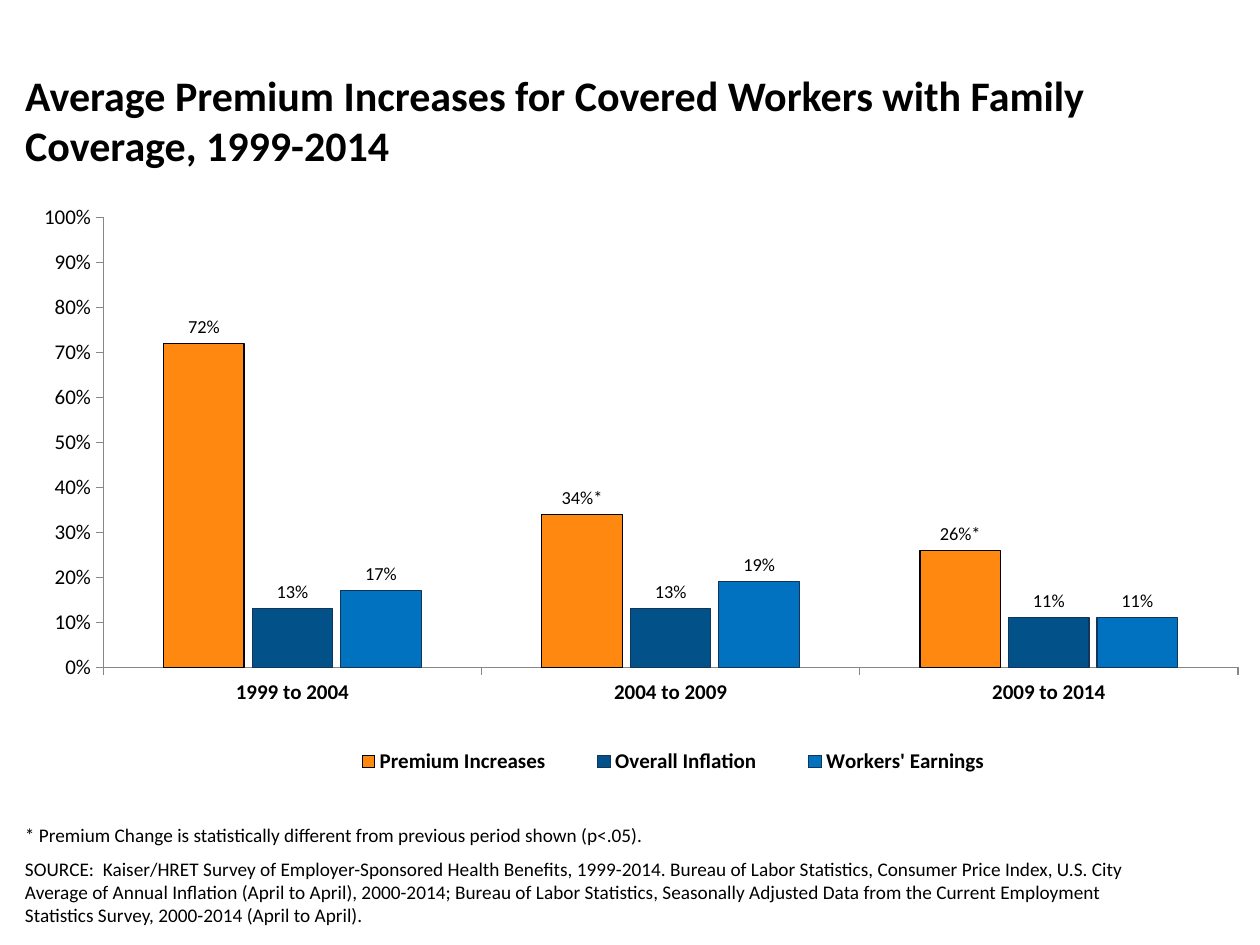
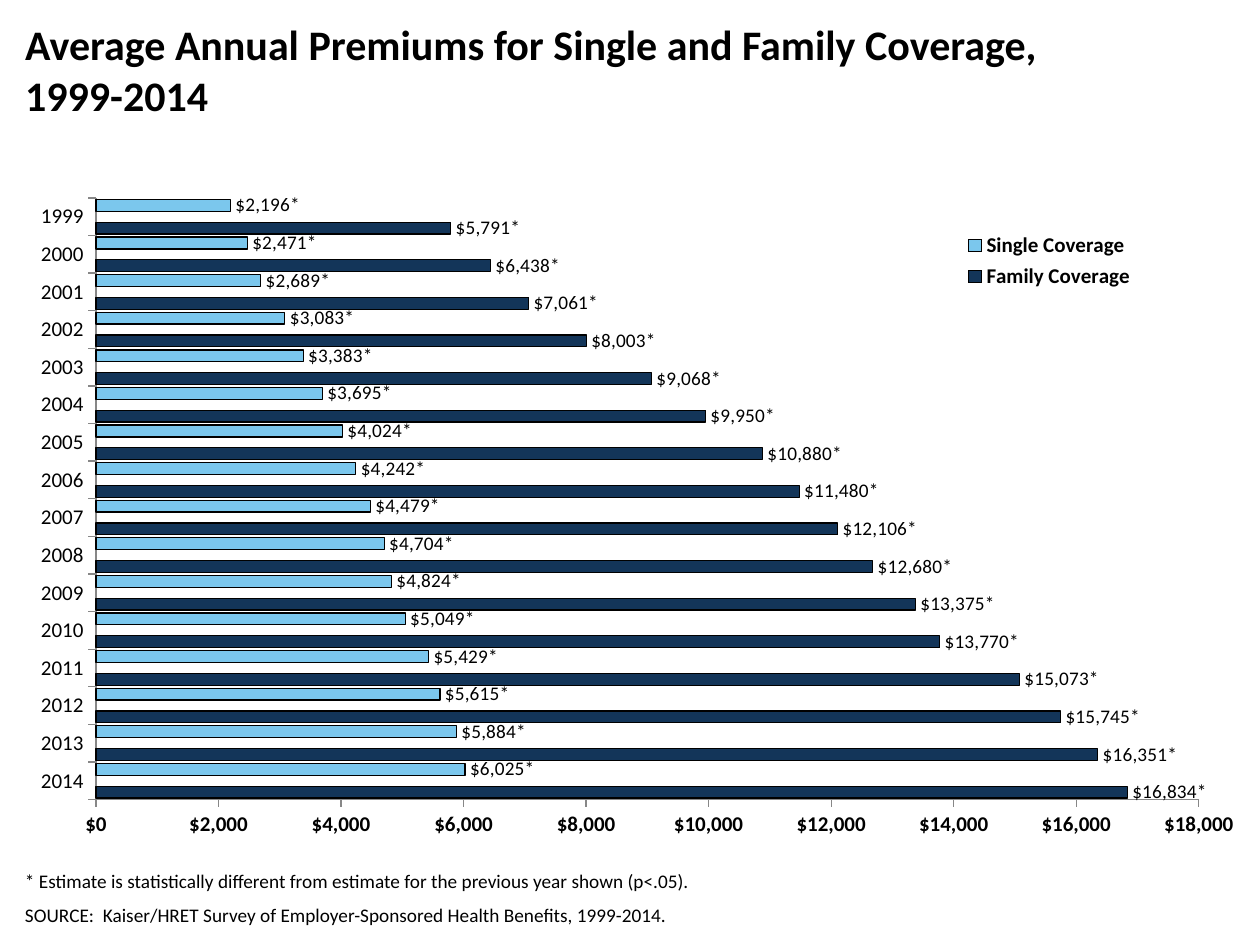
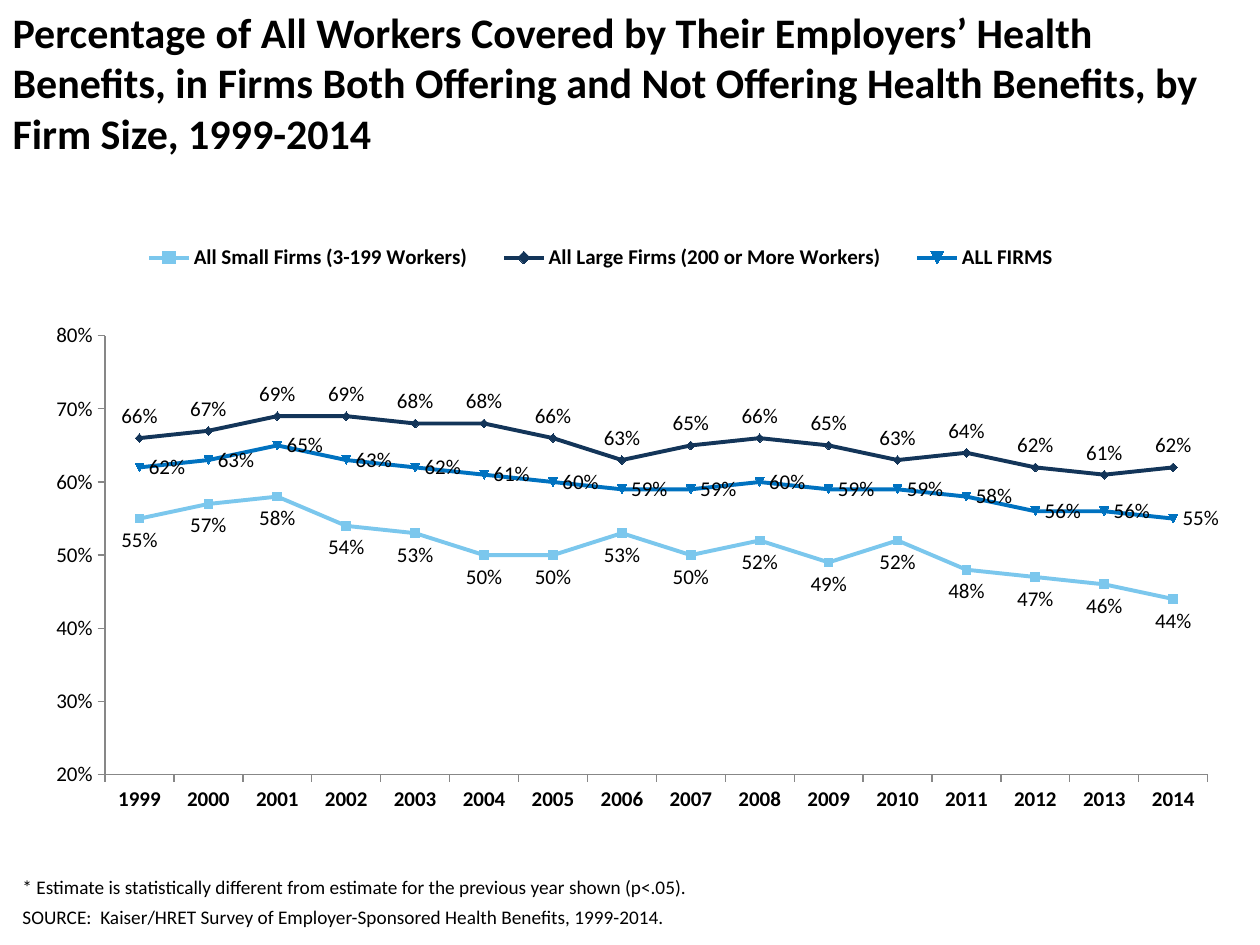
"""Build three chart slides on employer health premiums and coverage."""
from lxml import etree
from pptx import Presentation
from pptx import util as u
from pptx.chart import data as cd
from pptx.dml.color import RGBColor
from pptx.enum import chart as ec, text as et
from pptx.oxml import ns

BLACK = RGBColor(0, 0, 0)
GRAY = RGBColor(0x87, 0x87, 0x87)
ORANGE = RGBColor(0xFF, 0x88, 0x11)
TEAL = RGBColor(0x02, 0x51, 0x89)
BLUE = RGBColor(0x00, 0x72, 0xC0)
NAVY = RGBColor(0x13, 0x35, 0x59)
SKY = RGBColor(0x7B, 0xC7, 0xED)
FACE = "Calibri"
YEARS = [str(y) for y in range(1999, 2015)]
KIND = ec.XL_CHART_TYPE
SPOT = ec.XL_LABEL_POSITION
SIDE = ec.XL_LEGEND_POSITION
NOTE = "* Estimate is statistically different from estimate for the previous year shown (p<.05)."
SOURCE = "SOURCE:  Kaiser/HRET Survey of Employer-Sponsored Health Benefits, 1999-2014."
LONG = SOURCE + (
    " Bureau of Labor Statistics, Consumer Price Index, U.S. City Average of Annual Inflation"
    " (April to April), 2000-2014; Bureau of Labor Statistics, Seasonally Adjusted Data from the"
    " Current Employment Statistics Survey, 2000-2014 (April to April).")

SLIDES = [
    dict(
        title="Average Premium Increases for Covered Workers with Family Coverage, 1999-2014",
        head=(0.1, 0.1, 9.8, 1), top=0.45,
        notes=["* Premium Change is statistically different from previous period shown (p<.05).", LONG],
        foot=(0.1, 6.8, 9.1, 0.6), pitch=1.0,
        kind=KIND.COLUMN_CLUSTERED, box=(0.08, 1.42, 9.75, 4.92),
        plot=(0.076, 0.062, 0.924, 0.726),
        side=SIDE.BOTTOM, key=(0.25, 0.89, 0.58, 0.1),
        cats=["1999 to 2004", "2004 to 2009", "2009 to 2014"],
        scale=(0, 1, 0.1), form="0%", tag="0%", size=10.5, bold="cat", gap=(150, -10),
        rows=[("Premium Increases", ORANGE, BLACK, SPOT.OUTSIDE_END, [0.72, 0.34, 0.26]),
              ("Overall Inflation", TEAL, NAVY, SPOT.OUTSIDE_END, [0.13, 0.13, 0.11]),
              ("Workers' Earnings", BLUE, NAVY, SPOT.OUTSIDE_END, [0.17, 0.19, 0.11])],
        marks={1: "34%*", 2: "26%*"}),
    dict(
        title="Average Annual Premiums for Single and Family Coverage,\v1999-2014",
        head=(0.1, 0.1, 9.8, 1), top=0.05,
        notes=[NOTE, SOURCE], foot=(0.1, 6.8, 9.1, 0.6), pitch=1.0,
        kind=KIND.BAR_CLUSTERED, box=(0.08, 1.42, 9.88, 5.42),
        plot=(0.069, 0.028, 0.886, 0.881),
        side=SIDE.RIGHT, key=(0.76, 0.07, 0.15, 0.1),
        cats=YEARS[::-1],
        scale=(0, 18000, 2000), form="\\$#,##0", tag='"$"#,##0"*"', size=11, bold="val",
        gap=(26, -93),
        rows=[("Family Coverage", NAVY, BLACK, SPOT.OUTSIDE_END,
               [16834, 16351, 15745, 15073, 13770, 13375, 12680, 12106,
                11480, 10880, 9950, 9068, 8003, 7061, 6438, 5791]),
              ("Single Coverage", SKY, BLACK, SPOT.OUTSIDE_END,
               [6025, 5884, 5615, 5429, 5049, 4824, 4704, 4479,
                4242, 4024, 3695, 3383, 3083, 2689, 2471, 2196])],
        marks={}),
    dict(
        title="Percentage of All Workers Covered by Their Employers’ Health Benefits, in Firms Both "
              "Offering and Not Offering Health Benefits, by Firm Size, 1999-2014",
        head=(0, 0, 9.9, 1.25), top=0.05,
        notes=[NOTE, SOURCE], foot=(0.08, 6.67, 9, 0.75), pitch=0.85,
        kind=KIND.LINE_MARKERS, box=(0.08, 1.75, 9.67, 4.92),
        plot=(0.078, 0.186, 0.905, 0.708),
        side=SIDE.TOP, key=(0.09, 0.01, 0.79, 0.1),
        cats=YEARS,
        scale=(0.2, 0.8, 0.1), form="0%", tag="0%", size=12, bold="cat", gap=None,
        rows=[("All Small Firms (3-199 Workers)", SKY, SKY, SPOT.BELOW,
               [0.55, 0.57, 0.58, 0.54, 0.53, 0.5, 0.5, 0.53,
                0.5, 0.52, 0.49, 0.52, 0.48, 0.47, 0.46, 0.44]),
              ("All Large Firms (200 or More Workers)", NAVY, NAVY, SPOT.ABOVE,
               [0.66, 0.67, 0.69, 0.69, 0.68, 0.68, 0.66, 0.63,
                0.65, 0.66, 0.65, 0.63, 0.64, 0.62, 0.61, 0.62]),
              ("ALL FIRMS", BLUE, BLUE, SPOT.RIGHT,
               [0.62, 0.63, 0.65, 0.63, 0.62, 0.61, 0.6, 0.59,
                0.59, 0.6, 0.59, 0.59, 0.58, 0.56, 0.56, 0.55])],
        marks={}),
]


def put(obj, **vals):
    for name, val in vals.items():
        setattr(obj, name, val)


def style(font, size, bold=False):
    put(font, name=FACE, size=u.Pt(size), bold=bold)
    font.color.rgb = BLACK


def inches(box):
    return [u.Inches(v) for v in box]


def layout(node, spot, box, inner=False):
    for old in node.findall(ns.qn("c:layout")):
        node.remove(old)
    outer = etree.Element(ns.qn("c:layout"))
    hand = etree.SubElement(outer, ns.qn("c:manualLayout"))
    vals = [("layoutTarget", "inner")] if inner else []
    vals += [("xMode", "edge"), ("yMode", "edge"), *zip("xywh", box)]
    for name, val in vals:
        etree.SubElement(hand, ns.qn("c:" + name)).set("val", str(val))
    node.insert(spot, outer)


def add_title(slide, s):
    shape = slide.shapes.title
    put(shape, **dict(zip(("left", "top", "width", "height"), inches(s["head"]))))
    frame = shape.text_frame
    put(frame, text=s["title"], word_wrap=True, auto_size=et.MSO_AUTO_SIZE.NONE,
        vertical_anchor=et.MSO_ANCHOR.TOP, margin_top=u.Inches(s["top"]))
    para = frame.paragraphs[0]
    para.alignment = et.PP_ALIGN.LEFT
    style(para.font, 24, True)


def add_notes(slide, s):
    frame = slide.shapes.add_textbox(*inches(s["foot"])).text_frame
    put(frame, text="\n".join(s["notes"]), word_wrap=True, vertical_anchor=et.MSO_ANCHOR.BOTTOM)
    for i, para in enumerate(frame.paragraphs):
        para.line_spacing = s["pitch"]
        if i:
            para.space_before = u.Pt(6)
        style(para.font, 11)


def paint(row, series, s):
    _, fill, edge, spot, _ = row
    is_line = s["gap"] is None
    line = series.format.line
    line.color.rgb = edge
    line.width = u.Pt(2.25 if is_line else 0.75)
    if is_line:
        series.smooth = False
        put(series.marker, style=ec.XL_MARKER_STYLE.AUTOMATIC, size=5)
        part = series.marker.format
        part.line.color.rgb = edge
    else:
        series.invert_if_negative = False
        part = series.format
    part.fill.solid()
    part.fill.fore_color.rgb = fill
    tags = series.data_labels
    put(tags, show_value=True, number_format=s["tag"], number_format_is_linked=False, position=spot)
    style(tags.font, s["size"])


def add_chart(slide, s):
    data = cd.CategoryChartData(number_format=s["form"])
    data.categories = s["cats"]
    for name, *_, vals in s["rows"]:
        data.add_series(name, vals)
    chart = slide.shapes.add_chart(s["kind"], *inches(s["box"]), data).chart
    put(chart, has_title=False, has_legend=True)
    style(chart.font, 18)
    put(chart.legend, position=s["side"], include_in_layout=False)
    style(chart.legend.font, 12, True)
    layout(chart.legend._element, 1, s["key"])
    layout(chart.plots[0]._element.getparent(), 0, s["plot"], True)
    for name, axis in (("cat", chart.category_axis), ("val", chart.value_axis)):
        put(axis, has_major_gridlines=False, major_tick_mark=ec.XL_TICK_MARK.OUTSIDE,
            minor_tick_mark=ec.XL_TICK_MARK.NONE)
        axis.format.line.color.rgb = GRAY
        style(axis.tick_labels.font, 12, s["bold"] == name)
    low, high, step = s["scale"]
    put(chart.value_axis, minimum_scale=low, maximum_scale=high, major_unit=step)
    put(chart.value_axis.tick_labels, number_format=s["form"], number_format_is_linked=False)
    plot = chart.plots[0]
    plot.vary_by_categories = False
    if s["gap"]:
        put(plot, gap_width=s["gap"][0], overlap=s["gap"][1])
    for row, series in zip(s["rows"], plot.series):
        paint(row, series, s)
    for i, words in s["marks"].items():
        label = plot.series[0].points[i].data_label
        label.text_frame.text = words
        style(label.text_frame.paragraphs[0].runs[0].font, s["size"])
        label.position = SPOT.OUTSIDE_END


def main():
    deck = Presentation()
    put(deck, slide_width=u.Inches(10), slide_height=u.Inches(7.5))
    for s in SLIDES:
        slide = deck.slides.add_slide(deck.slide_layouts[5])
        add_title(slide, s)
        add_notes(slide, s)
        add_chart(slide, s)
    deck.save("out.pptx")


if __name__ == "__main__":
    main()
